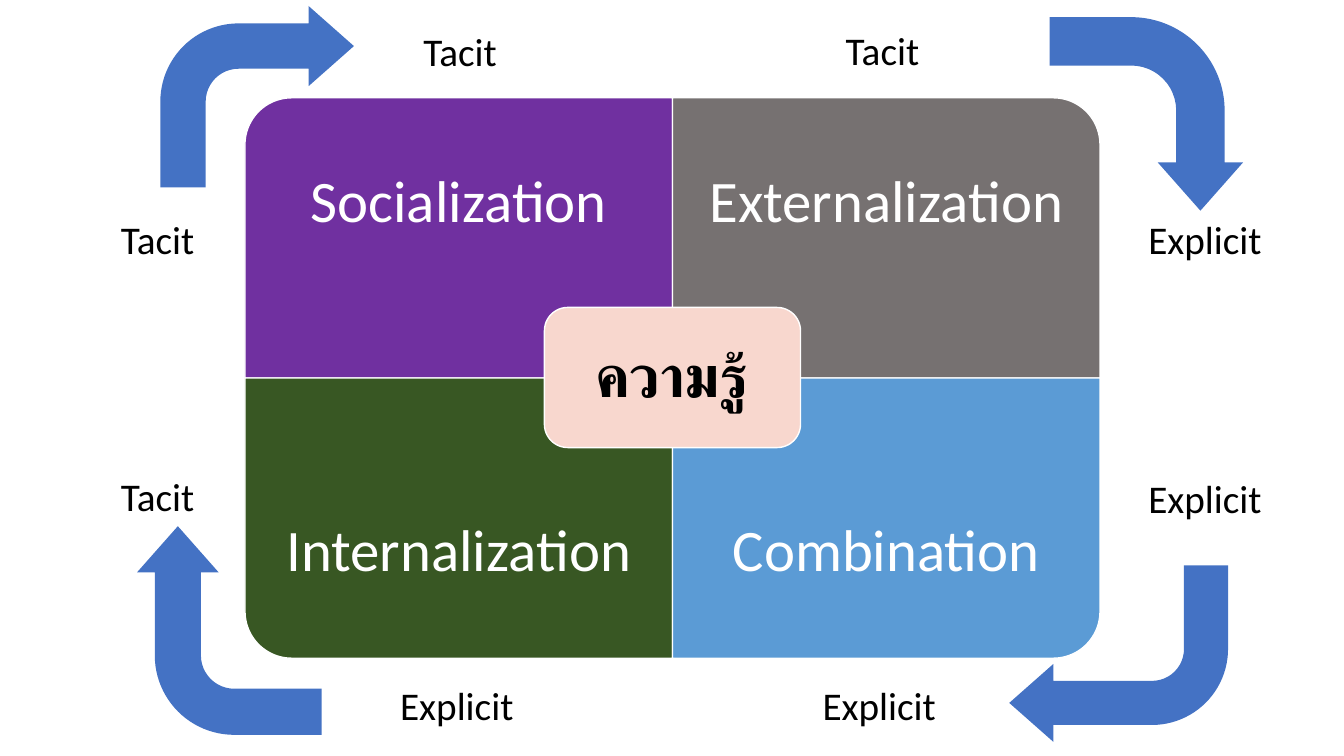
from dataclasses import dataclass
from typing import Any

from pptx import Presentation
from pptx.dml.color import RGBColor
from pptx.enum import shapes as es, text as et
from pptx.util import Inches, Pt

FONT = "Calibri"
WHITE, BLACK, BLUE = "FFFFFF", "000000", "4472C4"
MID_X, MID_Y = 6.67, 3.75
WIDE, HIGH = 4.24, 2.78
BAND = 2.09


@dataclass
class Part:
    name: str
    col: int
    row: int
    turn: int
    fill: str


@dataclass
class Label:
    word: str
    left: float
    top: float


@dataclass
class Arrow:
    left: float
    top: float
    width: float
    height: float
    turn: int
    bend: float = 0.431


PARTS = [
    Part("Socialization", 0, 0, 270, "7030A0"),
    Part("Externalization", 1, 0, 0, "767171"),
    Part("Internalization", 0, 1, 180, "385723"),
    Part("Combination", 1, 1, 90, "5B9BD5"),
]
LABELS = [
    Label("Tacit", 4.1, 0.22),
    Label("Tacit", 1.1, 2.09),
    Label("Tacit", 1.1, 4.64),
    Label("Tacit", 8.29, 0.21),
    Label("Explicit", 11.29, 2.09),
    Label("Explicit", 11.29, 4.66),
    Label("Explicit", 8.06, 6.71),
    Label("Explicit", 3.87, 6.71),
]
ARROWS = [
    Arrow(1.59, 0.06, 1.92, 1.8, 0),
    Arrow(10.01, 5.61, 2.17, 1.75, 180),
    Arrow(10.41, 0.17, 1.92, 1.92, 90, 0.483),
    Arrow(1.24, 5.34, 2.07, 1.83, 270),
]


def color(code: str) -> RGBColor:
    return RGBColor.from_string(code)


def add_form(pen: Any, kind: Any, x: float, y: float, w: float, h: float,
             fill: str, turn: int = 0, edge: str = "") -> Any:
    form = pen.add_shape(kind, Inches(x), Inches(y), Inches(w), Inches(h))
    form.shadow.inherit = False
    form.rotation = turn
    form.fill.solid()
    form.fill.fore_color.rgb = color(fill)
    if edge:
        form.line.color.rgb = color(edge)
        form.line.width = Pt(1)
    else:
        form.line.fill.background()
    return form


def add_text(pen: Any, word: str, x: float, y: float, w: float, h: float,
             size: int, ink: str, bold: bool = False) -> Any:
    box = pen.add_textbox(Inches(x), Inches(y), Inches(w), Inches(h))
    frame = box.text_frame
    frame.word_wrap = True
    run = frame.paragraphs[0].add_run()
    run.text = word
    run.font.name = FONT
    run.font.size = Pt(size)
    run.font.bold = bold
    run.font.color.rgb = color(ink)
    return frame


def add_title(pen: Any, word: str, x: float, y: float, w: float, h: float,
              inset: float, ink: str, bold: bool = False) -> None:
    frame = add_text(pen, word, x, y, w, h, 42, ink, bold)
    frame.vertical_anchor = et.MSO_ANCHOR.MIDDLE
    frame.margin_left = frame.margin_right = Inches(inset)
    frame.margin_top = frame.margin_bottom = Inches(inset)
    frame.paragraphs[0].alignment = et.PP_ALIGN.CENTER
    frame.paragraphs[0].line_spacing = 0.9


def add_part(pen: Any, part: Part) -> None:
    x = MID_X + (part.col - 1) * WIDE
    y = MID_Y + (part.row - 1) * HIGH
    w, h = (HIGH, WIDE) if part.turn % 180 else (WIDE, HIGH)
    add_form(pen, es.MSO_SHAPE.ROUND_1_RECTANGLE, x + (WIDE - w) / 2,
             y + (HIGH - h) / 2, w, h, part.fill, part.turn, WHITE)
    add_title(pen, part.name, x, y + part.row * (HIGH - BAND),
              WIDE, BAND, 0.33, WHITE)


def add_label(pen: Any, label: Label) -> None:
    short = label.word == "Tacit"
    frame = add_text(pen, label.word, label.left, label.top,
                     0.94 if short else 1.41, 0.57, 28, BLACK)
    frame.word_wrap = not short
    frame.auto_size = et.MSO_AUTO_SIZE.SHAPE_TO_FIT_TEXT


def add_arrow(pen: Any, arrow: Arrow) -> None:
    form = add_form(pen, es.MSO_SHAPE.BENT_ARROW, arrow.left, arrow.top,
                    arrow.width, arrow.height, BLUE, arrow.turn)
    for i, value in enumerate((0.25, 0.221, 0.25, arrow.bend)):
        form.adjustments[i] = value


def main() -> None:
    deck = Presentation()
    deck.slide_width, deck.slide_height = Inches(13.33), Inches(7.5)
    pen = deck.slides.add_slide(deck.slide_layouts[6]).shapes
    matrix = pen.add_group_shape().shapes
    for part in PARTS:
        add_part(matrix, part)
    add_form(matrix, es.MSO_SHAPE.ROUNDED_RECTANGLE,
             5.4, 3.05, 2.54, 1.39, "F8D7CE", edge=WHITE)
    add_title(matrix, "ความรู้", 5.46, 3.12, 2.41, 1.26, 0.17, BLACK, True)
    for label in LABELS:
        add_label(pen, label)
    for arrow in ARROWS:
        add_arrow(pen, arrow)
    deck.save("out.pptx")


if __name__ == "__main__":
    main()
